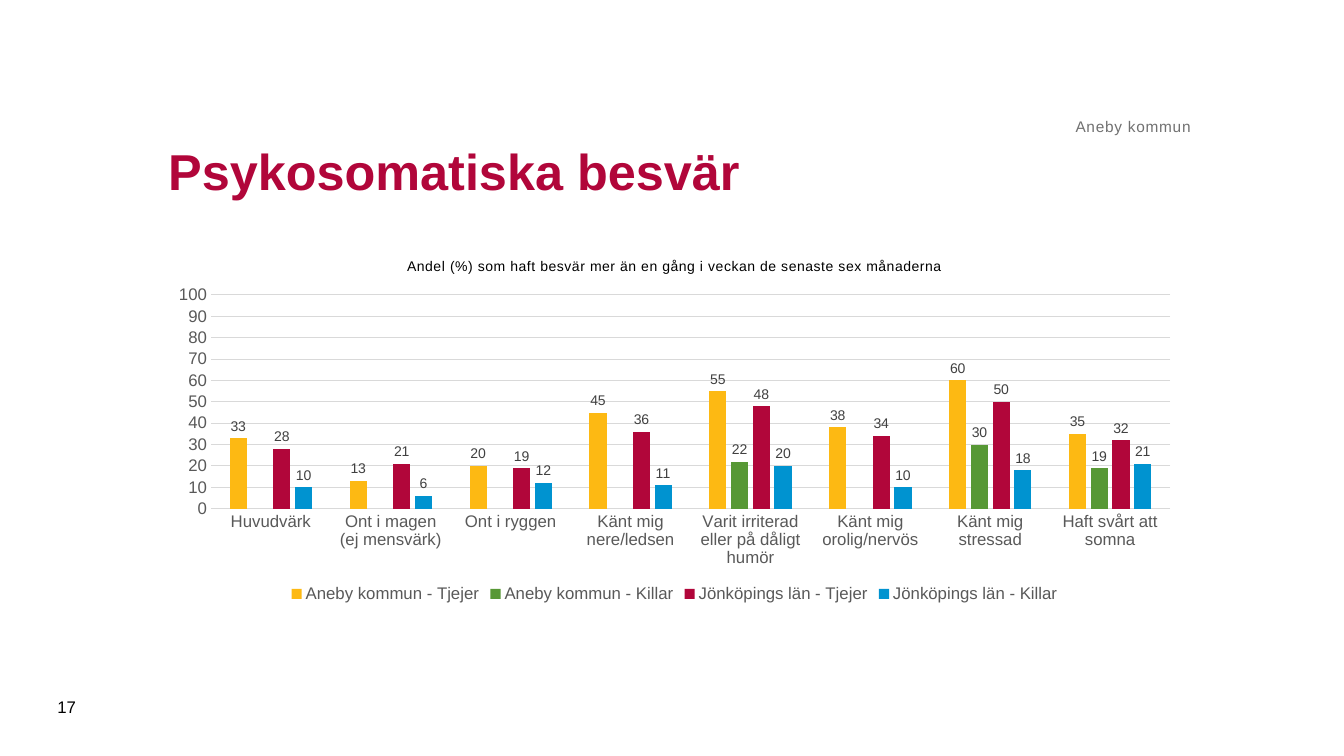
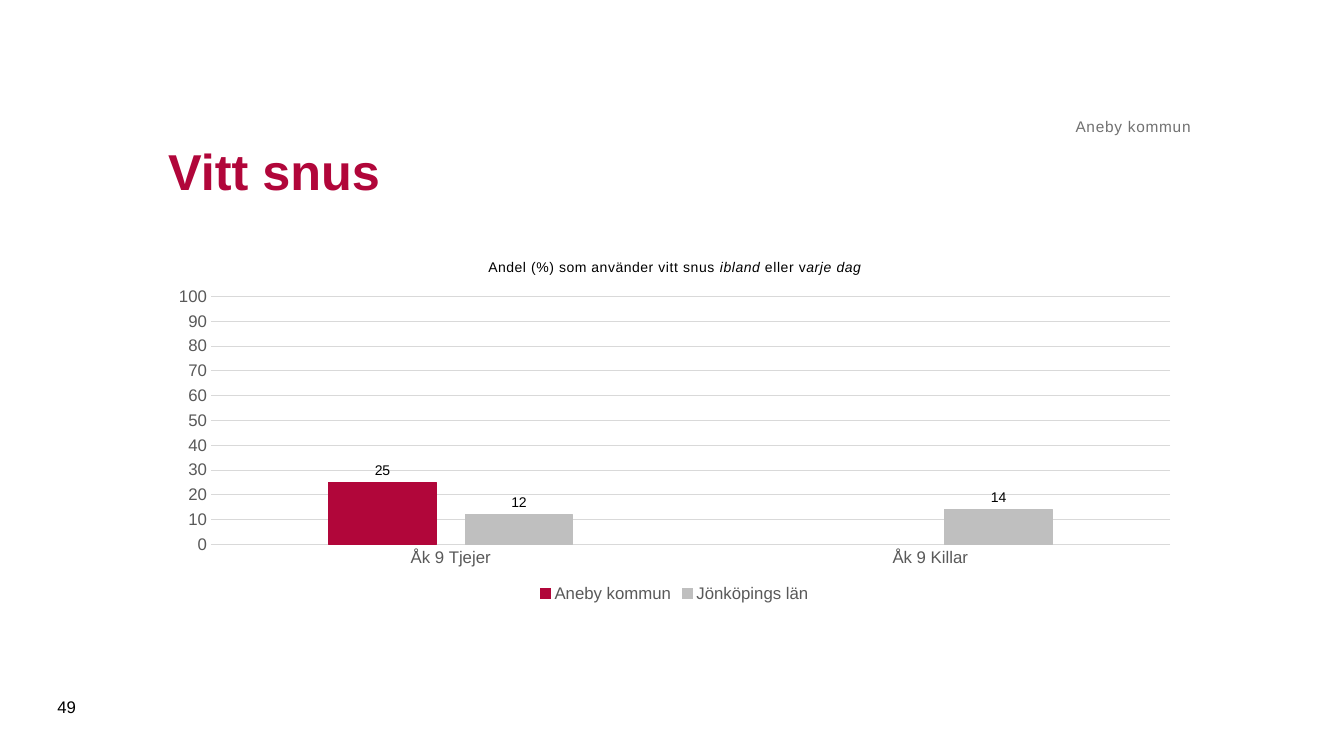
from pptx import Presentation
from pptx.chart.data import CategoryChartData
from pptx.dml.color import RGBColor
from pptx.enum.chart import XL_CHART_TYPE as ChartType, XL_LABEL_POSITION as LabelPosition
from pptx.enum.chart import XL_LEGEND_POSITION as LegendPosition, XL_TICK_MARK as TickMark
from pptx.enum.text import MSO_ANCHOR as Anchor, PP_ALIGN as Align
from pptx.util import Pt

PX = 9144
FONT = "Arial"
NUMBER_FORMAT = "#,##0;#,##0"
BLACK = RGBColor(0x00, 0x00, 0x00)
CRIMSON = RGBColor(0xB1, 0x06, 0x3A)
YELLOW = RGBColor(0xFD, 0xB9, 0x13)
GREEN = RGBColor(0x57, 0x98, 0x35)
BLUE = RGBColor(0x00, 0x93, 0xD0)
SILVER = RGBColor(0xBF, 0xBF, 0xBF)
GRID_GREY = RGBColor(0xD9, 0xD9, 0xD9)
AXIS_GREY = RGBColor(0x59, 0x59, 0x59)
LABEL_GREY = RGBColor(0x40, 0x40, 0x40)
HEADER_GREY = RGBColor(0x71, 0x71, 0x71)

SLIDES = [
    {
        "title": "Psykosomatiska besvär",
        "number": "17",
        "chart_title": [
            ("Andel (%) som haft besvär mer än en gång i veckan de senaste sex månaderna", False),
        ],
        "categories": [
            "Huvudvärk", "Ont i magen (ej mensvärk)", "Ont i ryggen", "Känt mig nere/ledsen",
            "Varit irriterad eller på dåligt humör", "Känt mig orolig/nervös",
            "Känt mig stressad", "Haft svårt att somna",
        ],
        "series": [
            ("Aneby kommun - Tjejer", YELLOW, [33, 13, 20, 45, 55, 38, 60, 35]),
            ("Aneby kommun - Killar", GREEN, [None, None, None, None, 22, None, 30, 19]),
            ("Jönköpings län - Tjejer", CRIMSON, [28, 21, 19, 36, 48, 34, 50, 32]),
            ("Jönköpings län - Killar", BLUE, [10, 6, 12, 11, 20, 10, 18, 21]),
        ],
        "label_color": LABEL_GREY,
        "outlined": False,
    },
    {
        "title": "Vitt snus",
        "number": "49",
        "chart_title": [
            ("Andel (%) som använder vitt snus ", False),
            ("ibland", True),
            (" eller v", False),
            ("arje dag", True),
        ],
        "categories": ["Åk 9 Tjejer", "Åk 9 Killar"],
        "series": [
            ("Aneby kommun", CRIMSON, [25, None]),
            ("Jönköpings län", SILVER, [12, 14]),
        ],
        "label_color": BLACK,
        "outlined": True,
    },
]


def style_font(font, size, color, bold=False):
    font.name = FONT
    font.size = Pt(size)
    font.bold = bold
    font.color.rgb = color


def add_text(slide, text, box, size, color, anchor=Anchor.MIDDLE, bold=False):
    shape = slide.shapes.add_textbox(*(length * PX for length in box))
    text_frame = shape.text_frame
    text_frame.word_wrap = True
    text_frame.vertical_anchor = anchor
    text_frame.text = text
    style_font(text_frame.paragraphs[0].runs[0].font, size, color, bold)
    return text_frame


presentation = Presentation()
presentation.slide_width = 1333 * PX
presentation.slide_height = 750 * PX

for content in SLIDES:
    slide = presentation.slides.add_slide(presentation.slide_layouts[6])

    chart_data = CategoryChartData(number_format=NUMBER_FORMAT)
    chart_data.categories = content["categories"]
    for name, color, values in content["series"]:
        chart_data.add_series(name, values)
    chart = slide.shapes.add_chart(
        ChartType.COLUMN_CLUSTERED, 157 * PX, 240 * PX, 1024 * PX, 362 * PX, chart_data
    ).chart
    style_font(chart.font, 10, BLACK)

    chart.has_title = True
    chart.chart_title.include_in_layout = False
    title_paragraph = chart.chart_title.text_frame.paragraphs[0]
    for text, italic in content["chart_title"]:
        run = title_paragraph.add_run()
        run.text = text
        style_font(run.font, 10, BLACK)
        run.font.italic = italic
        run._r.get_or_add_rPr().set("spc", "50")

    chart.has_legend = True
    chart.legend.position = LegendPosition.BOTTOM
    chart.legend.include_in_layout = False
    style_font(chart.legend.font, 12, AXIS_GREY)

    category_axis, value_axis = chart.category_axis, chart.value_axis
    for axis in (category_axis, value_axis):
        axis.major_tick_mark = TickMark.NONE
        axis.minor_tick_mark = TickMark.NONE
        style_font(axis.tick_labels.font, 12, AXIS_GREY)
    value_axis.minimum_scale = 0
    value_axis.maximum_scale = 100
    value_axis.major_unit = 10
    value_axis.tick_labels.number_format = NUMBER_FORMAT
    value_axis.tick_labels.number_format_is_linked = False
    value_axis.format.line.fill.background()
    for line in (category_axis.format.line, value_axis.major_gridlines.format.line):
        line.color.rgb = GRID_GREY
        line.width = Pt(0.75)

    plot = chart.plots[0]
    plot.gap_width = 219
    plot.overlap = -27
    plot.vary_by_categories = False
    for series, (name, color, values) in zip(plot.series, content["series"]):
        series.invert_if_negative = False
        series.format.fill.solid()
        series.format.fill.fore_color.rgb = color
        if content["outlined"]:
            series.format.line.color.rgb = color
            series.format.line.width = Pt(0.75)
        labels = series.data_labels
        labels.show_value = True
        labels.position = LabelPosition.OUTSIDE_END
        labels.number_format = NUMBER_FORMAT
        labels.number_format_is_linked = False
        style_font(labels.font, 10, content["label_color"])

    add_text(slide, content["title"], (157, 98, 1024, 142), 36, CRIMSON, bold=True)

    header = add_text(slide, "Aneby kommun", (157, 62, 1024, 73), 11, HEADER_GREY, Anchor.BOTTOM)
    header.margin_left = header.margin_right = header.margin_top = header.margin_bottom = 0
    header_paragraph = header.paragraphs[0]
    header_paragraph.alignment = Align.RIGHT
    header_paragraph.runs[0]._r.get_or_add_rPr().set("spc", "50")

    add_text(slide, content["number"], (47, 681, 57, 40), 12, BLACK)

presentation.save("out.pptx")
